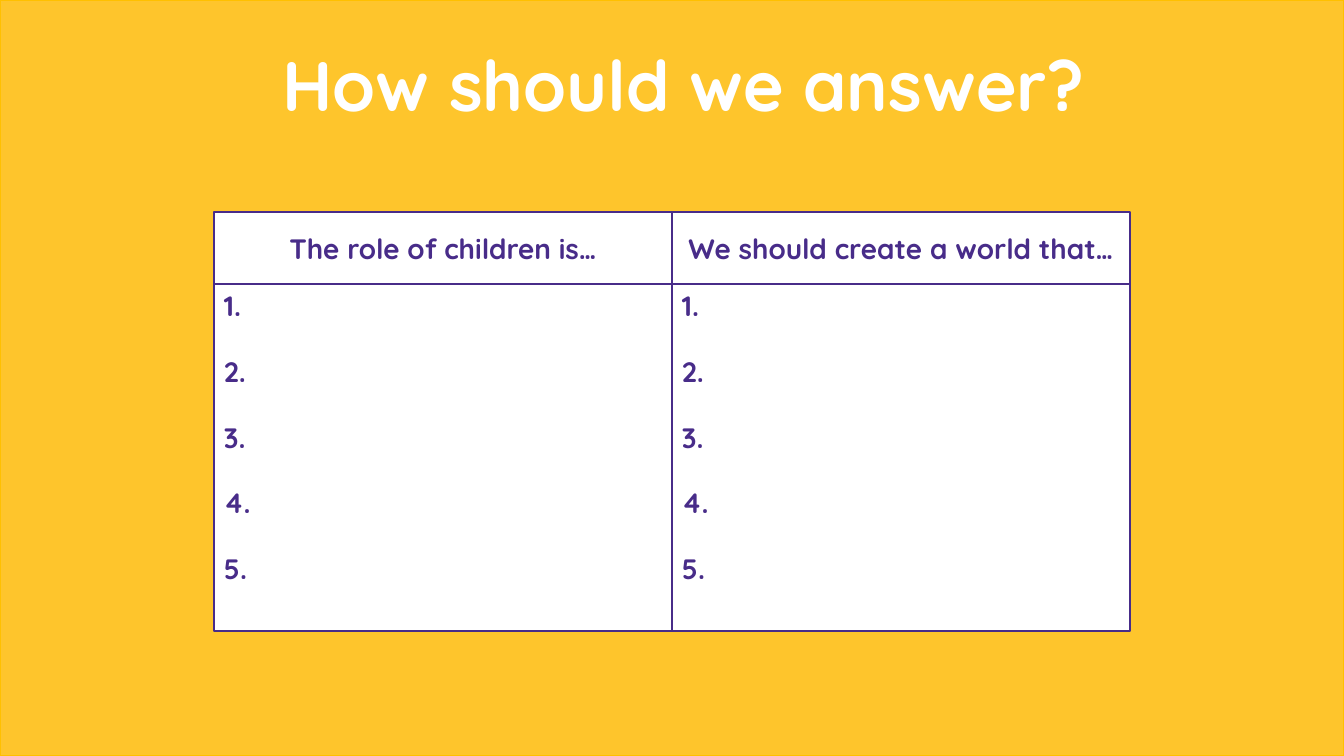
from pptx import Presentation
from pptx.dml.color import RGBColor
from pptx.enum.shapes import MSO_SHAPE
from pptx.enum.text import MSO_ANCHOR, MSO_AUTO_SIZE, PP_ALIGN
from pptx.util import Emu, Pt

# Content
TITLE = "How should we answer?"
HEADINGS = ["The role of children is…", "We should create a world that…"]
ANSWERS = ["1.", "2.", "3.", "4.", "5."]

# Look
FONT = "Quicksand"
WHITE = RGBColor(0xFF, 0xFF, 0xFF)
YELLOW = RGBColor(0xFE, 0xC5, 0x2C)
AMBER = RGBColor(0xFF, 0xC0, 0x00)
PURPLE = RGBColor(0x48, 0x2C, 0x89)
RECTANGLE = MSO_SHAPE.RECTANGLE
TOP, MIDDLE = MSO_ANCHOR.TOP, MSO_ANCHOR.MIDDLE
LEFT, CENTER = PP_ALIGN.LEFT, PP_ALIGN.CENTER
FIT_TEXT = MSO_AUTO_SIZE.SHAPE_TO_FIT_TEXT

# Layout in px
SLIDE_WIDTH, SLIDE_HEIGHT = 1344, 756
TITLE_BOX = (203, 36, 961, 95)
GRID_LEFT, GRID_TOP = 214, 212
COLUMN_WIDTH = 458
HEADING_HEIGHT, ANSWER_HEIGHT = 72, 347
ANSWER_GAP = Pt(22.9)


def px(value):
    return Emu(round(value * 12192000 / SLIDE_WIDTH))


def add_rectangle(slide, box, fill, line):
    shape = slide.shapes.add_shape(RECTANGLE, *map(px, box))
    shape.shadow.inherit = False
    shape.fill.solid()
    shape.fill.fore_color.rgb = fill
    shape.line.color.rgb = line
    shape.line.width = Pt(1)
    return shape


def write(shape, lines, size, color, align, anchor, gap=Pt(0)):
    frame = shape.text_frame
    frame.word_wrap = True
    frame.vertical_anchor = anchor
    for index, line in enumerate(lines):
        paragraph = frame.add_paragraph() if index else frame.paragraphs[0]
        paragraph.alignment = align
        paragraph.line_spacing = 1.0
        paragraph.space_before = Pt(0)
        paragraph.space_after = gap
        run = paragraph.add_run()
        run.text = line
        run.font.name = FONT
        run.font.size = Pt(size)
        run.font.bold = True
        run.font.color.rgb = color


def main():
    presentation = Presentation()
    presentation.slide_width = px(SLIDE_WIDTH)
    presentation.slide_height = px(SLIDE_HEIGHT)
    slide = presentation.slides.add_slide(presentation.slide_layouts[5])

    # Title on a full-slide panel
    title = slide.shapes.title
    title.left, title.top, title.width, title.height = map(px, TITLE_BOX)
    write(title, [TITLE], 50, WHITE, CENTER, TOP)
    title.text_frame.auto_size = FIT_TEXT
    panel = add_rectangle(slide, (0, 0, SLIDE_WIDTH, SLIDE_HEIGHT), YELLOW, AMBER)
    title.element.addprevious(panel.element)

    # Two columns: a heading box above a numbered answer box
    for column, heading in enumerate(HEADINGS):
        left = GRID_LEFT + column * COLUMN_WIDTH
        heading_box = (left, GRID_TOP, COLUMN_WIDTH, HEADING_HEIGHT)
        answer_box = (left, GRID_TOP + HEADING_HEIGHT, COLUMN_WIDTH, ANSWER_HEIGHT)
        heading_shape = add_rectangle(slide, heading_box, WHITE, PURPLE)
        write(heading_shape, [heading], 20, PURPLE, CENTER, MIDDLE)
        answer_shape = add_rectangle(slide, answer_box, WHITE, PURPLE)
        write(answer_shape, ANSWERS, 20, PURPLE, LEFT, TOP, ANSWER_GAP)

    presentation.save("out.pptx")


if __name__ == "__main__":
    main()
